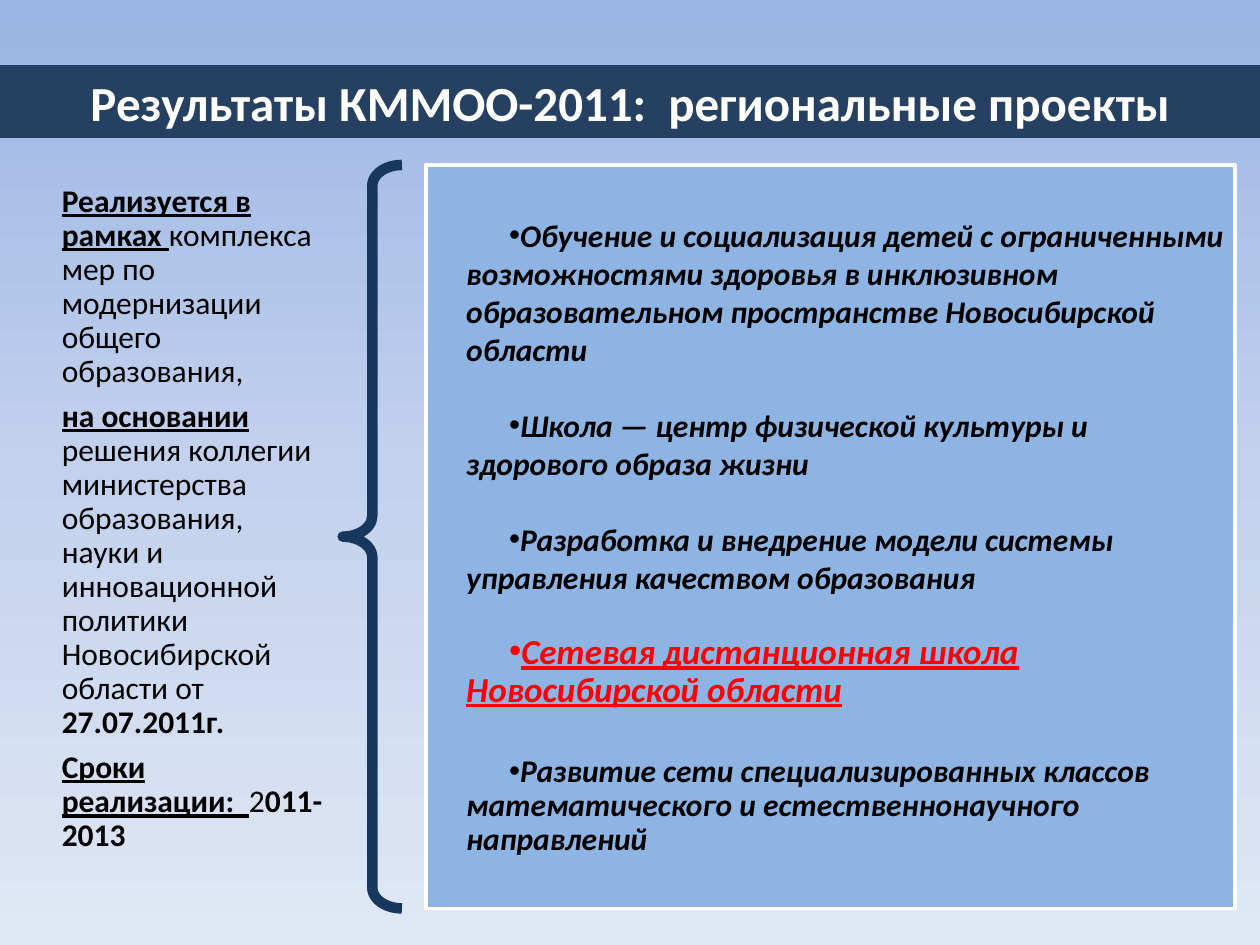
"""Build a slide on regional education projects."""
from copy import deepcopy

from lxml import etree
from pptx import Presentation
from pptx.dml.color import RGBColor
from pptx.enum.shapes import MSO_SHAPE
from pptx.enum.text import MSO_ANCHOR, MSO_AUTO_SIZE, PP_ALIGN
from pptx.oxml.ns import qn
from pptx.util import Inches, Pt

BRACE = MSO_SHAPE.LEFT_BRACE
MIDDLE = MSO_ANCHOR.MIDDLE
FIXED = MSO_AUTO_SIZE.NONE
CENTER = PP_ALIGN.CENTER
LEFT = PP_ALIGN.LEFT

BLACK = RGBColor(0x00, 0x00, 0x00)
WHITE = RGBColor(0xFF, 0xFF, 0xFF)
RED = RGBColor(0xFF, 0x00, 0x00)
NAVY = RGBColor(0x25, 0x40, 0x61)
DEEP = RGBColor(0x17, 0x37, 0x5E)
BLUE = RGBColor(0x8E, 0xB4, 0xE3)
SKY = (RGBColor(0x9A, 0xB5, 0xE4), RGBColor(0xC2, 0xD1, 0xED),
       RGBColor(0xE1, 0xE8, 0xF5))

TITLE = "Результаты КММОО-2011:  региональные проекты"
BASIS = [
    [("Реализуется в рамках ", True, True),
     ("комплекса мер по модернизации общего образования,", False, False)],
    [("на основании ", True, True),
     ("решения коллегии министерства образования, науки и инновационной "
      "политики Новосибирской области от ", False, False),
     ("27.07.2011г.", True, False)],
    [("Сроки реализации:  ", True, True), ("2", False, False),
     ("011-2013", True, False)],
]
# text, size, colour, underline, line spacing, space before, space after
WORKS = [
    ("Обучение и социализация детей с ограниченными возможностями здоровья "
     "в инклюзивном образовательном пространстве Новосибирской области",
     18, BLACK, False, 1.0, 0, 0),
    ("Школа — центр физической культуры и здорового образа жизни",
     18, BLACK, False, 1.0, 22, 0),
    ("Разработка и внедрение модели системы управления качеством образования",
     18, BLACK, False, 1.0, 22, 0),
    ("Сетевая дистанционная школа Новосибирской области",
     20, RED, True, 0.9, 22, 3),
    ("Развитие сети специализированных классов математического и "
     "естественнонаучного направлений",
     18, BLACK, False, 0.9, 23, 3),
]


def paint(slide):
    """Fill the background with a vertical gradient."""
    fill = slide.background.fill
    fill.gradient()
    fill.gradient_angle = 270
    stops = slide.background._cSld.find(".//" + qn("a:gsLst"))
    stops.insert(1, deepcopy(stops[0]))
    for stop, tone, spot in zip(fill.gradient_stops, SKY, (0, 0.5, 1)):
        stop.color.rgb = tone
        stop.position = spot


def place(shape, left, top, width, height):
    """Move and size a shape in inches."""
    shape.left, shape.top = Inches(left), Inches(top)
    shape.width, shape.height = Inches(width), Inches(height)


def box(shape, fill, line, width):
    """Give a shape a solid fill and an outline."""
    shape.fill.solid()
    shape.fill.fore_color.rgb = fill
    shape.line.color.rgb = line
    shape.line.width = Pt(width)


def frame(shape, side, edge):
    """Set the insets and the middle anchor of a text frame."""
    text = shape.text_frame
    text.word_wrap = True
    text.auto_size = FIXED
    text.vertical_anchor = MIDDLE
    text.margin_left = text.margin_right = Inches(side)
    text.margin_top = text.margin_bottom = Inches(edge)
    return text


def style(run, size, color, bold=True, italic=False, under=False):
    """Format one run."""
    font = run.font
    font.name, font.size = "Calibri", Pt(size)
    font.bold, font.italic, font.underline = bold, italic, under
    font.color.rgb = color


def layout(para, lines, before, after, margin=0, indent=0, mark=None):
    """Set the spacing, indents and bullet of a paragraph."""
    para.alignment = LEFT
    para.line_spacing = lines
    para.space_before, para.space_after = Pt(before), Pt(after)
    props = para._p.get_or_add_pPr()
    props.set("marL", str(Inches(margin)))
    props.set("indent", str(Inches(indent)))
    if mark:
        etree.SubElement(props, qn("a:buChar")).set("char", mark)
    else:
        etree.SubElement(props, qn("a:buNone"))


def rows(text, count):
    """Return the given number of paragraphs of a text frame."""
    return [text.paragraphs[0]] + [text.add_paragraph()
                                   for _ in range(count - 1)]


def banner(shape):
    """Set the title band."""
    place(shape, 0, 0.52, 10, 0.57)
    box(shape, NAVY, NAVY, 0.75)
    text = frame(shape, 0.1, 0.05)
    text.text = TITLE
    para = text.paragraphs[0]
    para.alignment = CENTER
    style(para.runs[0], 28, WHITE)


def basis(shape):
    """Write the grounds and dates on the left."""
    place(shape, 0.35, 2.69, 2.36, 2.86)
    text = frame(shape, 0.14, 0.05)
    for para, parts in zip(rows(text, len(BASIS)), BASIS):
        layout(para, 0.9, 0, 6.3)
        for words, bold, under in parts:
            run = para.add_run()
            run.text = words
            style(run, 18, BLACK, bold, under=under)


def works(shape):
    """Write the list of projects on the right."""
    place(shape, 3.38, 1.31, 6.42, 5.9)
    box(shape, BLUE, WHITE, 2)
    text = frame(shape, 0.07, 0.07)
    for para, work in zip(rows(text, len(WORKS)), WORKS):
        words, size, color, under, lines, before, after = work
        para.text = words
        layout(para, lines, before, after, 0.25, 0.34, "•")
        style(para.runs[0], size, color, italic=True, under=under)


def brace(slide):
    """Draw the brace between the two columns."""
    shape = slide.shapes.add_shape(BRACE, Inches(2.72), Inches(1.31),
                                   Inches(0.47), Inches(5.9))
    shape.adjustments[0] = 0.35
    shape.adjustments[1] = 0.5
    shape.shadow.inherit = False
    shape.fill.background()
    shape.line.color.rgb = DEEP
    shape.line.width = Pt(6)


def main():
    """Build and save the slide."""
    deck = Presentation()
    deck.slide_width, deck.slide_height = Inches(10), Inches(7.5)
    slide = deck.slides.add_slide(deck.slide_layouts[3])
    paint(slide)
    title, left, right = slide.placeholders
    banner(title)
    basis(left)
    works(right)
    brace(slide)
    deck.save("out.pptx")


if __name__ == "__main__":
    main()
